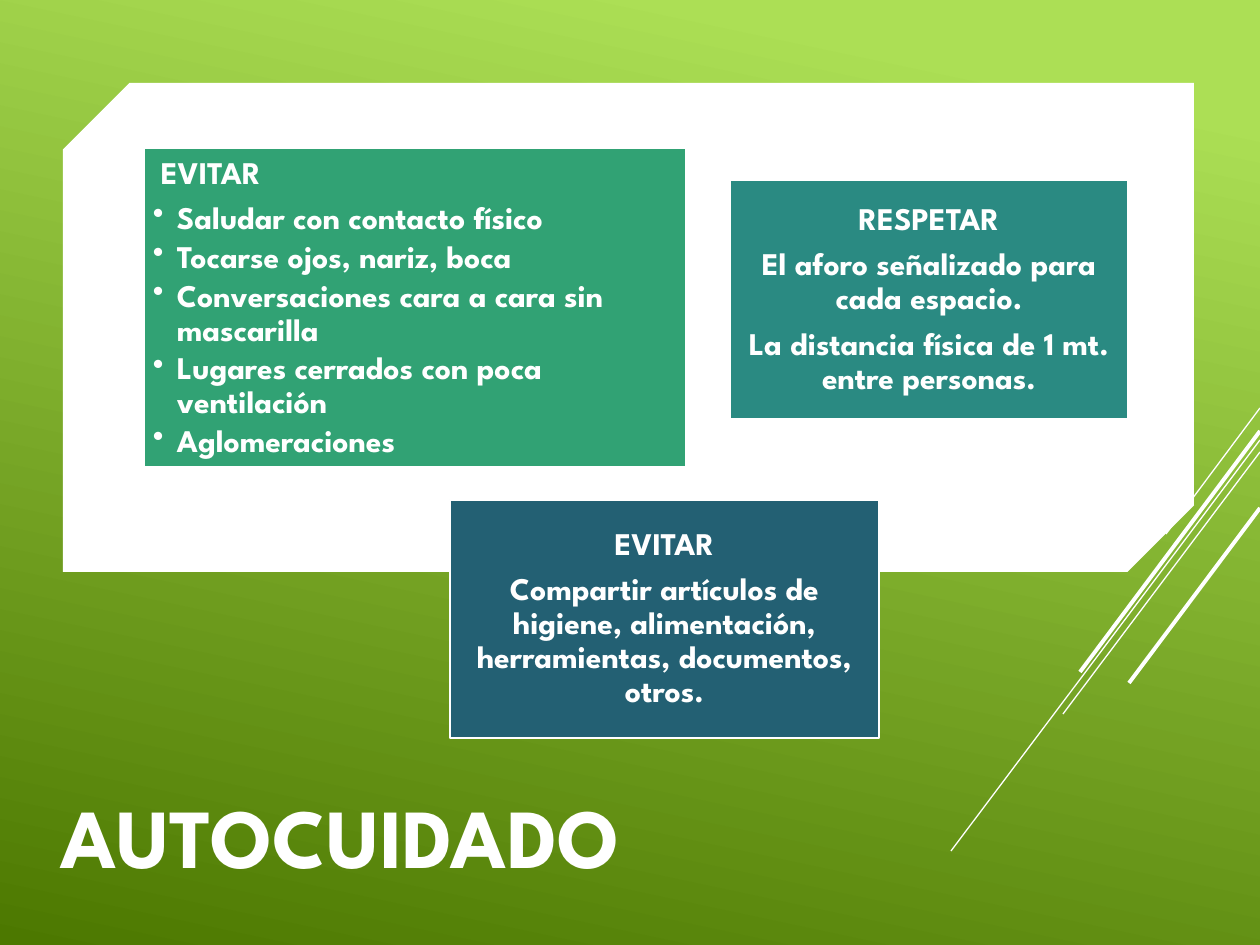
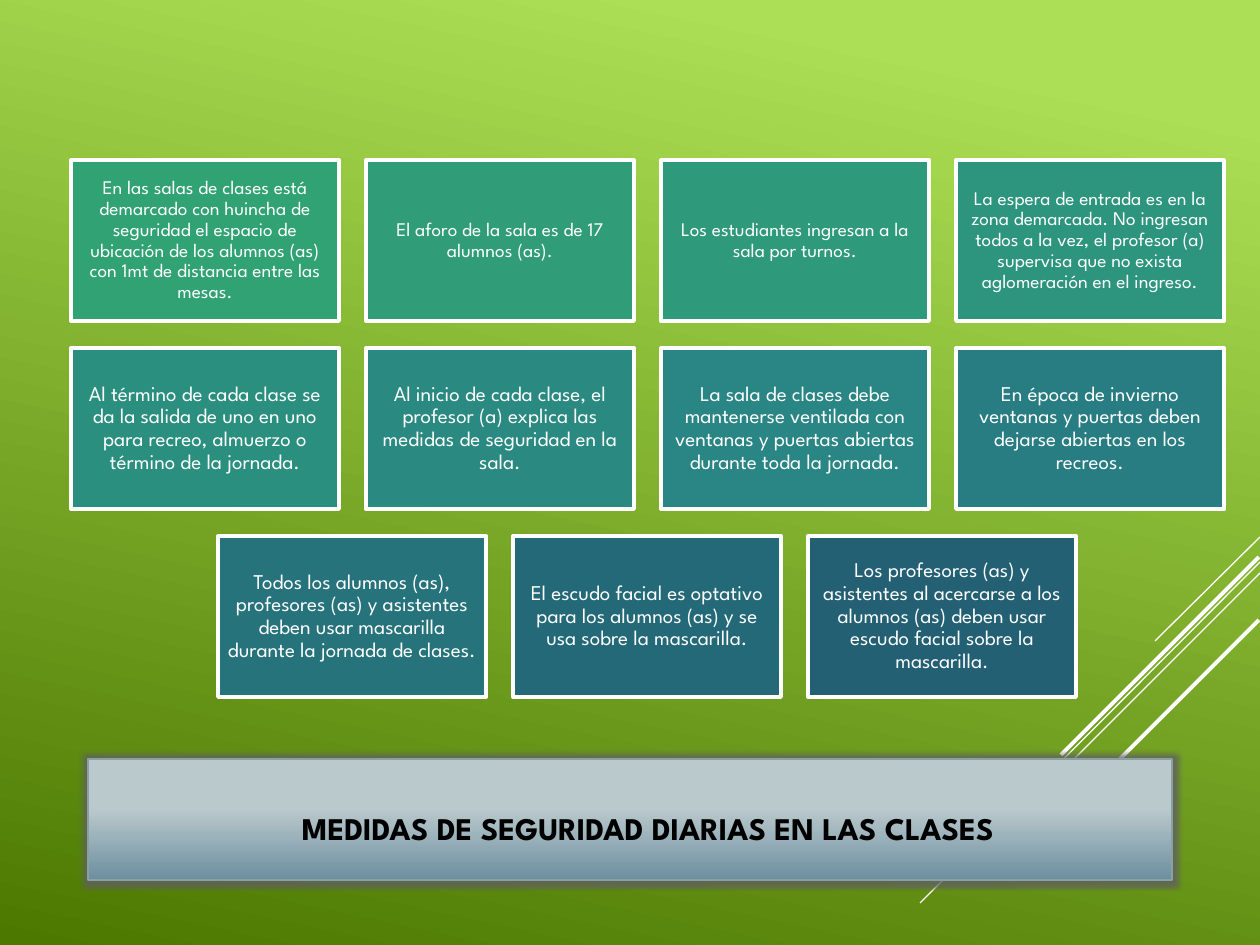
from lxml.etree import SubElement
from pptx import Presentation
from pptx.dml.color import RGBColor
from pptx.enum.shapes import MSO_CONNECTOR, MSO_SHAPE
from pptx.enum.text import MSO_ANCHOR as ANCHOR, MSO_AUTO_SIZE, PP_ALIGN as ALIGN
from pptx.oxml.ns import qn
from pptx.util import Emu, Pt

PX_PER_INCH = 126
SLIDE_WIDTH, SLIDE_HEIGHT = 1260, 945
TITLE_ONLY = 5
FONT = "League Spartan"
COLORS = {
    "white": "FFFFFF", "black": "000000",
    "light_green": "ACDF55", "dark_green": "4C7800",
    "light_steel": "BAC9CC", "dark_steel": "6C8FA0",
    "steel_line": "8BA0A4", "glow": "5F5F5F",
    "card_1": "31A274", "card_2": "309D78", "card_3": "2E997B", "card_4": "2D947E",
    "card_5": "2B8F80", "card_6": "2A8A82", "card_7": "298684", "card_8": "277D81",
    "card_9": "26737C", "card_10": "246978", "card_11": "236073",
}

# Each streak: start x, start y, end x, end y (px), width (pt)
STEEP_STREAKS = [
    (1260, 408, 1166, 534, 0.75), (1260, 440, 951, 851, 0.75),
    (1260, 452, 1063, 714, 0.75), (1260, 431, 1080, 672, 2.25),
    (1260, 508, 1129, 683, 2.25),
]
DIAGONAL_STREAKS = [
    (1260, 537, 1155, 641, 0.75), (1260, 562, 920, 903, 0.75),
    (1260, 573, 1043, 790, 0.75), (1259, 557, 1061, 755, 2.25),
    (1259, 620, 1115, 764, 2.25),
]

AVOID_HABITS = [
    "Saludar con contacto físico",
    "Tocarse ojos, nariz, boca",
    "Conversaciones cara a cara sin mascarilla",
    "Lugares cerrados con poca ventilación",
    "Aglomeraciones",
]
MEASURE_ROWS = [
    (11, [
        "En las salas de clases está demarcado con huincha de seguridad el espacio de "
        "ubicación de los alumnos (as) con 1mt de distancia entre las mesas.",
        "El aforo de la sala es de 17 alumnos (as).",
        "Los estudiantes ingresan a la sala por turnos.",
        "La espera de entrada es en la zona demarcada. No ingresan todos a la vez, el "
        "profesor (a) supervisa que no exista aglomeración en el ingreso.",
    ]),
    (12, [
        "Al término de cada clase se da la salida de uno en uno para recreo, almuerzo o "
        "término de la jornada.",
        "Al inicio de cada clase, el profesor (a) explica las medidas de seguridad en la sala.",
        "La sala de clases debe mantenerse ventilada con ventanas y puertas abiertas "
        "durante toda la jornada.",
        "En época de invierno ventanas y puertas deben dejarse abiertas en los recreos.",
    ]),
    (12, [
        "Todos los alumnos (as), profesores (as) y asistentes deben usar mascarilla "
        "durante la jornada de clases.",
        "El escudo facial es optativo para los alumnos (as) y se usa sobre la mascarilla.",
        "Los profesores (as) y asistentes al acercarse a los alumnos (as) deben usar "
        "escudo facial sobre la mascarilla.",
    ]),
]


def px(length):
    return Emu(round(length * 914400 / PX_PER_INCH))


def rgb(name):
    return RGBColor.from_string(COLORS[name])


def set_gradient(fill, stops, angle):
    """Two-stop linear gradient; the angle runs counter-clockwise."""
    fill.gradient()
    fill.gradient_angle = angle
    for stop, (position, color) in zip(fill.gradient_stops, stops):
        stop.position = position
        stop.color.rgb = rgb(color)


def set_line(line, color, width):
    line.color.rgb = rgb(color)
    line.width = Pt(width)


def set_frame(shape, anchor, margins):
    """Margins are left, top, right, bottom in px."""
    frame = shape.text_frame
    frame.word_wrap = True
    frame.auto_size = MSO_AUTO_SIZE.NONE
    frame.vertical_anchor = anchor
    (frame.margin_left, frame.margin_top,
     frame.margin_right, frame.margin_bottom) = map(px, margins)


def add_text(shape, text, size=18, bold=True, color="white", align=ALIGN.CENTER,
             spacing=0.9, after=0, left=0, hanging=0, bullet=None):
    """Write one paragraph, using the empty first one if there is one."""
    frame = shape.text_frame
    paragraph = frame.add_paragraph() if frame.text else frame.paragraphs[0]
    paragraph.alignment = align
    paragraph.line_spacing = spacing
    paragraph.space_before = Pt(0)
    paragraph.space_after = Pt(after)
    properties = paragraph._p.get_or_add_pPr()
    properties.set("marL", str(px(left)))
    properties.set("indent", str(px(-hanging)))
    if bullet:
        SubElement(properties, qn("a:buChar"), char=bullet)
    run = paragraph.add_run()
    run.text = text
    run.font.name = FONT
    run.font.size = Pt(size)
    run.font.bold = bold
    run.font.color.rgb = rgb(color)


def add_box(slide, box, color, line_width=None, kind=MSO_SHAPE.RECTANGLE,
            anchor=ANCHOR.MIDDLE, margin=9):
    shape = slide.shapes.add_shape(kind, *map(px, box))
    shape.shadow.inherit = False
    shape.fill.solid()
    shape.fill.fore_color.rgb = rgb(color)
    if line_width:
        set_line(shape.line, "white", line_width)
    else:
        shape.line.fill.background()
    set_frame(shape, anchor, [margin] * 4)
    return shape


def add_streaks(slide, streaks):
    for *ends, width in streaks:
        streak = slide.shapes.add_connector(MSO_CONNECTOR.STRAIGHT, *map(px, ends))
        set_line(streak.line, "white", width)
        SubElement(streak.element.spPr, qn("a:effectLst"))


def add_slide(presentation):
    slide = presentation.slides.add_slide(presentation.slide_layouts[TITLE_ONLY])
    set_gradient(slide.background.fill, [(0.1, "light_green"), (1, "dark_green")], 258)
    return slide


def place_title(slide, text, box, anchor, margins, **text_format):
    """Format the title and bring it in front of what is already drawn."""
    title = slide.shapes.title
    title.left, title.top, title.width, title.height = map(px, box)
    set_frame(title, anchor, margins)
    add_text(title, text, **text_format)
    title.element.getparent().append(title.element)
    return title


def add_glow(shape, color, radius, alpha):
    shape.shadow.inherit = False
    effects = shape.element.spPr.find(qn("a:effectLst"))
    glow = SubElement(effects, qn("a:glow"), rad=str(px(radius)))
    glow_color = SubElement(glow, qn("a:srgbClr"), val=COLORS[color])
    SubElement(glow_color, qn("a:alpha"), val=str(alpha * 1000))


def build_self_care(presentation):
    slide = add_slide(presentation)
    place_title(slide, "AUTOCUIDADO", (48, 721, 1060, 170), ANCHOR.BOTTOM,
                (12, 6, 12, 6), size=48, align=ALIGN.LEFT, spacing=1)
    panel = add_box(slide, (63, 83, 1131, 489), "white",
                    kind=MSO_SHAPE.SNIP_2_DIAG_RECTANGLE)
    panel.adjustments[0] = 0.136
    panel.adjustments[1] = 0
    add_streaks(slide, STEEP_STREAKS)

    avoid = add_box(slide, (144, 148, 542, 319), "card_1", 1, anchor=ANCHOR.TOP)
    add_text(avoid, "EVITAR", align=ALIGN.LEFT, after=6.5, left=8)
    for habit in AVOID_HABITS:
        add_text(avoid, habit, align=ALIGN.LEFT, after=2.7, left=24, hanging=24, bullet="•")

    respect = add_box(slide, (730, 180, 398, 239), "card_6", 1)
    for text in ("RESPETAR", "El aforo señalizado para cada espacio.",
                 "La distancia física de 1 mt. entre personas."):
        add_text(respect, text, after=6.5)

    sharing = add_box(slide, (450, 500, 429, 238), "card_11", 1)
    for text in ("EVITAR", "Compartir artículos de higiene, alimentación, "
                 "herramientas, documentos, otros."):
        add_text(sharing, text, after=6.5)


def build_class_measures(presentation):
    slide = add_slide(presentation)
    add_streaks(slide, DIAGONAL_STREAKS)
    title = place_title(slide, "MEDIDAS DE SEGURIDAD DIARIAS EN LAS CLASES",
                        (88, 759, 1084, 121), ANCHOR.MIDDLE, (48, 28, 12, 6),
                        size=18, color="black")
    set_gradient(title.fill, [(0.41, "light_steel"), (1, "dark_steel")], 270)
    set_line(title.line, "steel_line", 0.75)
    add_glow(title, "glow", 10, 80)

    left, top, width, height, gap = 71, 160, 268, 161, 27
    columns = len(MEASURE_ROWS[0][1])
    number = 0
    for row, (size, measures) in enumerate(MEASURE_ROWS):
        row_left = left + (columns - len(measures)) * (width + gap) // 2
        for column, measure in enumerate(measures):
            number += 1
            box = (row_left + column * (width + gap), top + row * (height + gap),
                   width, height)
            card = add_box(slide, box, f"card_{number}", 2.25, margin=6)
            add_text(card, measure, size=size, bold=False, after=4)


def main():
    presentation = Presentation()
    presentation.slide_width = px(SLIDE_WIDTH)
    presentation.slide_height = px(SLIDE_HEIGHT)
    build_self_care(presentation)
    build_class_measures(presentation)
    presentation.save("out.pptx")


if __name__ == "__main__":
    main()
